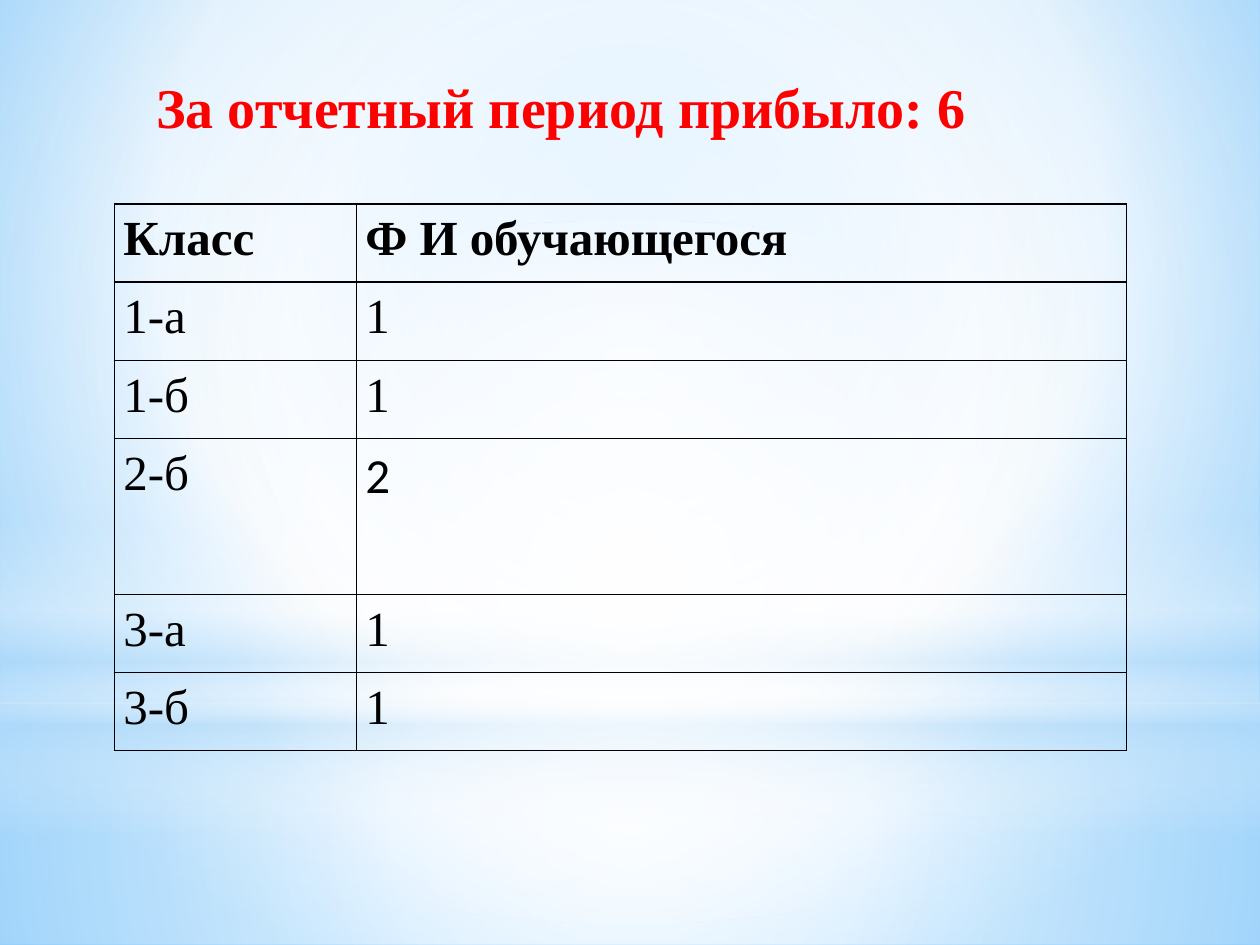
from dataclasses import dataclass
from typing import Optional

from lxml import etree
from pptx import Presentation
from pptx import util as u
from pptx.dml.color import RGBColor
from pptx.enum import shapes, text
from pptx.oxml import ns

WIDTH, HEIGHT = u.Inches(10), u.Inches(7.5)
COLORS = {"white": "FFFFFF", "pale": "B4DCFA", "sky": "9ED5FF",
          "azure": "5BB9FF", "red": "FF0000", "black": "000000"}
SERIF, SANS = "Times New Roman", "Calibri"
CENTER = (50, 50, 50, 50)
ROW_HEIGHT = 0.62


@dataclass(frozen=True)
class Stop:
    position: int
    color: str
    opacity: int = 100


@dataclass(frozen=True)
class Gradient:
    stops: tuple[Stop, ...]
    focus: Optional[tuple[int, ...]] = CENTER


@dataclass(frozen=True)
class Glow:
    top: float
    height: float
    gradient: Gradient
    kind: shapes.MSO_SHAPE = shapes.MSO_SHAPE.RECTANGLE


@dataclass(frozen=True)
class Row:
    label: str
    value: str
    units: int = 1
    bold: bool = False
    value_font: str = SERIF


BACKGROUND = Gradient((Stop(0, "sky"), Stop(60, "white"), Stop(100, "azure")),
                      (20, 10, 20, 60))
GLOWS = (
    Glow(0.744, 0.256, Gradient((Stop(0, "white", 91), Stop(37, "white", 76),
                                 Stop(100, "pale", 79)))),
    Glow(0, 0.744, Gradient((Stop(0, "white", 89), Stop(48, "white", 62),
                             Stop(100, "pale", 79)))),
    Glow(0.55, 0.333, Gradient((Stop(0, "white", 0), Stop(29, "white", 30),
                                Stop(45, "pale", 40), Stop(55, "white", 26),
                                Stop(65, "pale", 60), Stop(100, "white", 0)), None)),
    Glow(0.233, 0.744, Gradient((Stop(0, "white"), Stop(56, "white", 0))),
         shapes.MSO_SHAPE.OVAL),
)
ROWS = (
    Row("Класс", "Ф И обучающегося", bold=True),
    Row("1-а", "1"),
    Row("1-б", "1"),
    Row("2-б", "2", units=2, value_font=SANS),
    Row("3-а", "1"),
    Row("3-б", "1"),
)


def add_child(parent, tag: str, **attributes):
    return etree.SubElement(parent, ns.qn(tag),
                            {name: str(value) for name, value in attributes.items()})


def apply_gradient(fill, owner, gradient: Gradient) -> None:
    fill.solid()
    solid = owner.find(".//" + ns.qn("a:solidFill"))
    element = etree.Element(ns.qn("a:gradFill"), rotWithShape="1")
    stop_list = add_child(element, "a:gsLst")
    for stop in gradient.stops:
        mark = add_child(stop_list, "a:gs", pos=stop.position * 1000)
        color = add_child(mark, "a:srgbClr", val=COLORS[stop.color])
        if stop.opacity < 100:
            add_child(color, "a:alpha", val=stop.opacity * 1000)
    if gradient.focus is None:
        add_child(element, "a:lin", ang=90 * 60000, scaled=0)
    else:
        shade = add_child(element, "a:path", path="circle")
        add_child(shade, "a:fillToRect",
                  **{side: share * 1000 for side, share in zip("ltrb", gradient.focus)})
    solid.getparent().replace(solid, element)


def add_glow(slide, glow: Glow) -> None:
    shape = slide.shapes.add_shape(glow.kind, 0, int(HEIGHT * glow.top),
                                   WIDTH, int(HEIGHT * glow.height))
    shape.shadow.inherit = False
    shape.line.fill.background()
    apply_gradient(shape.fill, shape.element.spPr, glow.gradient)


def add_run(paragraph, content: str, size: int, font: str, color: str, bold: bool) -> None:
    run = paragraph.add_run()
    run.text = content
    run.font.size = u.Pt(size)
    run.font.name = font
    run.font.bold = bold
    run.font.color.rgb = RGBColor.from_string(COLORS[color])


def format_cell(cell, content: str, font: str, bold: bool) -> None:
    cell.margin_left = cell.margin_right = u.Inches(0.07)
    cell.margin_top = cell.margin_bottom = 0
    cell.fill.background()
    properties = cell._tc.get_or_add_tcPr()
    for index, side in enumerate("LRTB"):
        border = add_child(properties, f"a:ln{side}", w=u.Pt(1))
        add_child(add_child(border, "a:solidFill"), "a:srgbClr", val=COLORS["black"])
        properties.insert(index, border)
    paragraph = cell.text_frame.paragraphs[0]
    paragraph.line_spacing = 1.15
    add_run(paragraph, content, 28, font, "black", bold)


def add_class_table(slide) -> None:
    total_height = ROW_HEIGHT * sum(row.units for row in ROWS)
    table = slide.shapes.add_table(len(ROWS), 2, u.Inches(0.91), u.Inches(1.62),
                                   u.Inches(8.03), u.Inches(total_height)).table
    table.first_row = table.horz_banding = False
    for column, width in zip(table.columns, (1.92, 6.11)):
        column.width = u.Inches(width)
    for index, row in enumerate(ROWS):
        table.rows[index].height = u.Inches(ROW_HEIGHT * row.units)
        format_cell(table.cell(index, 0), row.label, SERIF, row.bold)
        format_cell(table.cell(index, 1), row.value, row.value_font, row.bold)


def format_title(slide) -> None:
    title = slide.shapes.title
    title.left, title.top = u.Inches(1.14), u.Inches(0.52)
    title.width, title.height = u.Inches(6.69), u.Inches(0.64)
    frame = title.text_frame
    frame.word_wrap = False
    frame.auto_size = text.MSO_AUTO_SIZE.SHAPE_TO_FIT_TEXT
    frame.vertical_anchor = text.MSO_ANCHOR.MIDDLE
    paragraph = frame.paragraphs[0]
    paragraph.alignment = text.PP_ALIGN.LEFT
    add_run(paragraph, "За отчетный период прибыло: 6", 32, SERIF, "red", True)
    title.element.getparent().append(title.element)


def main() -> None:
    presentation = Presentation()
    presentation.slide_width, presentation.slide_height = WIDTH, HEIGHT
    slide = presentation.slides.add_slide(presentation.slide_layouts[5])
    apply_gradient(slide.background.fill, slide.element, BACKGROUND)
    for glow in GLOWS:
        add_glow(slide, glow)
    add_class_table(slide)
    format_title(slide)
    presentation.save("out.pptx")


if __name__ == "__main__":
    main()
